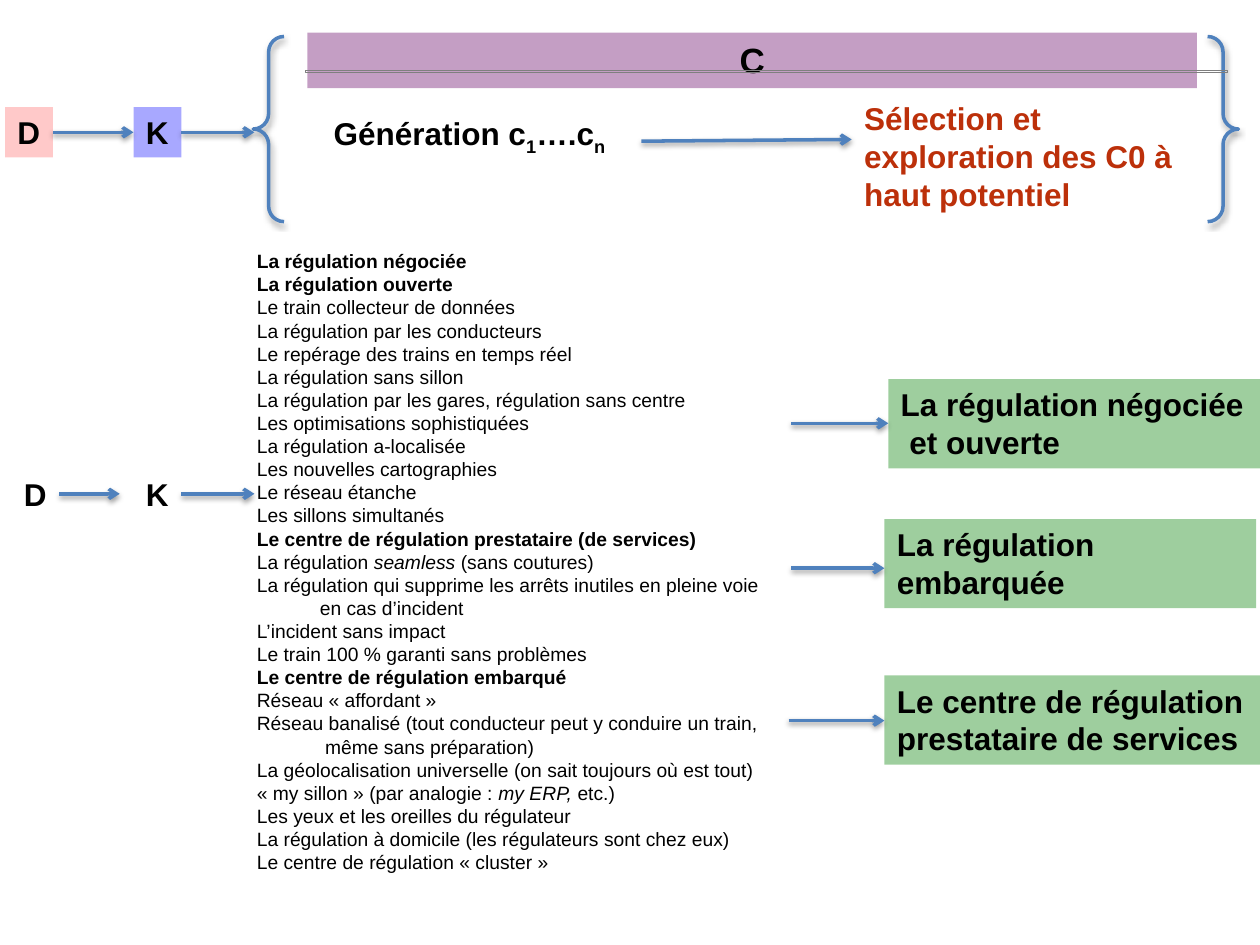
from collections import namedtuple
from dataclasses import dataclass

from lxml.etree import SubElement
from pptx import Presentation
from pptx.dml.color import RGBColor
from pptx.enum.shapes import MSO_CONNECTOR, MSO_SHAPE
from pptx.enum.text import MSO_ANCHOR, MSO_AUTO_SIZE, PP_ALIGN
from pptx.oxml.ns import qn
from pptx.util import Pt


@dataclass(frozen=True)
class Theme:
    font: str = "Arial"
    ink: str = "000000"
    accent: str = "BC300A"
    line: str = "4F81BD"
    rule: str = "7F7F7F"
    data: tuple = ("FF0000", 21)
    knowledge: tuple = ("0000FF", 34)
    concept: tuple = ("660066", 38)
    outcome: tuple = ("008000", 38)
    list_size: int = 11
    body_size: int = 18
    header_size: int = 20
    line_width: int = 2
    leading: float = 1.2


THEME = Theme()
Box = namedtuple("Box", "left top width height")
Run = namedtuple("Run", "text bold italic baseline", defaults=(False, False, 0))
Line = namedtuple("Line", "runs indent", defaults=(0,))


def plain(text, indent=0):
    return Line([Run(text)], indent)


def bold(text, indent=0):
    return Line([Run(text, bold=True)], indent)


CONCEPTS = [
    bold("La régulation négociée"),
    bold("La régulation ouverte"),
    plain("Le train collecteur de données"),
    plain("La régulation par les conducteurs"),
    plain("Le repérage des trains en temps réel"),
    plain("La régulation sans sillon"),
    plain("La régulation par les gares, régulation sans centre"),
    plain("Les optimisations sophistiquées"),
    plain("La régulation a-localisée"),
    plain("Les nouvelles cartographies"),
    plain("Le réseau étanche"),
    plain("Les sillons simultanés"),
    bold("Le centre de régulation prestataire (de services)"),
    Line([Run("La régulation "), Run("seamless ", italic=True), Run("(sans coutures)")]),
    plain("La régulation qui supprime les arrêts inutiles en pleine voie"),
    plain("en cas d’incident", indent=36),
    plain("L’incident sans impact"),
    plain("Le train 100 % garanti sans problèmes"),
    bold("Le centre de régulation embarqué"),
    plain("Réseau « affordant »"),
    plain("Réseau banalisé (tout conducteur peut y conduire un train,"),
    plain("même sans préparation)", indent=39),
    plain("La géolocalisation universelle (on sait toujours où est tout)"),
    Line([Run("« my sillon » (par analogie : "), Run("my ERP, ", italic=True), Run("etc.)")]),
    plain("Les yeux et les oreilles du régulateur"),
    plain("La régulation à domicile (les régulateurs sont chez eux)"),
    plain("Le centre de régulation « cluster »"),
]

OUTCOMES = [
    (Box(507.6, 216.7, 212.4, 51), 452.2, 25.2,
     [bold("La régulation négociée"), bold("et ouverte", indent=5)]),
    (Box(505.4, 296.6, 212.4, 51), 452.2, 28.1,
     [bold("La régulation"), bold("embarquée")]),
    (Box(505.4, 385.9, 214.6, 51), 450.7, 25.9,
     [bold("Le centre de régulation"), bold("prestataire de services")]),
]


def points(*lengths):
    return [Pt(length) for length in lengths]


def add_shadow(shape):
    effects = SubElement(shape._element.spPr, qn("a:effectLst"))
    shadow = SubElement(effects, qn("a:outerShdw"), blurRad=str(Pt(3.1)),
                        dist=str(Pt(1.6)), dir="5400000", rotWithShape="0")
    color = SubElement(shadow, qn("a:srgbClr"), val=THEME.ink)
    SubElement(color, qn("a:alpha"), val="38000")


def style_line(shape):
    shape.line.color.rgb = RGBColor.from_string(THEME.line)
    shape.line.width = Pt(THEME.line_width)
    add_shadow(shape)


def add_arrow(slide, start, end):
    arrow = slide.shapes.add_connector(MSO_CONNECTOR.STRAIGHT, *points(*start, *end))
    style_line(arrow)
    SubElement(arrow.line._get_or_add_ln(), qn("a:tailEnd"), type="arrow")


def write_lines(shape, lines, size, color=THEME.ink, align=PP_ALIGN.LEFT, wrap=True):
    frame = shape.text_frame
    frame.word_wrap = wrap
    frame.auto_size = MSO_AUTO_SIZE.SHAPE_TO_FIT_TEXT
    frame.vertical_anchor = MSO_ANCHOR.TOP
    for index, line in enumerate(lines):
        paragraph = frame.add_paragraph() if index else frame.paragraphs[0]
        paragraph.alignment = align
        paragraph.line_spacing = Pt(size * THEME.leading)
        if line.indent:
            paragraph._p.get_or_add_pPr().set("marL", str(Pt(line.indent)))
        for part in line.runs:
            run = paragraph.add_run()
            run.text = part.text
            run.font.name = THEME.font
            run.font.size = Pt(size)
            run.font.bold = part.bold
            run.font.italic = part.italic
            run.font.color.rgb = RGBColor.from_string(color)
            if part.baseline:
                run._r.get_or_add_rPr().set("baseline", str(part.baseline))


def add_text(slide, box, lines, size, **options):
    write_lines(slide.shapes.add_textbox(*points(*box)), lines, size, **options)


def add_panel(slide, box, fill, lines, size, **options):
    panel = slide.shapes.add_shape(MSO_SHAPE.RECTANGLE, *points(*box))
    panel.shadow.inherit = False
    panel.line.fill.background()
    color, opacity = fill
    panel.fill.solid()
    panel.fill.fore_color.rgb = RGBColor.from_string(color)
    color_element = panel._element.spPr.find(qn("a:solidFill"))[0]
    SubElement(color_element, qn("a:alpha"), val=str(opacity * 1000))
    write_lines(panel, lines, size, **options)


def add_chain(slide, box, first_arrow_end, fills):
    letter_width = 27.4
    knowledge_left = 76.3
    letters = zip("DK", (box.left, knowledge_left), fills)
    for letter, left, fill in letters:
        letter_box = Box(left, box.top, letter_width, box.height)
        lines = [bold(letter)]
        if fill:
            add_panel(slide, letter_box, fill, lines, THEME.body_size, wrap=False)
        else:
            add_text(slide, letter_box, lines, THEME.body_size, wrap=False)
    middle = box.top + box.height / 2
    add_arrow(slide, (box.left + letter_width, middle), (first_arrow_end, middle))
    add_arrow(slide, (knowledge_left + letter_width, middle), (box.left + box.width, middle))


def add_concept_space(slide, box):
    braces = slide.shapes.add_shape(MSO_SHAPE.DOUBLE_BRACE, *points(*box))
    braces.fill.background()
    style_line(braces)
    left, top = box.left, box.top
    add_panel(slide, Box(left + 31, top - 2.2, 508.3, 31.7), THEME.concept,
              [bold("C")], THEME.header_size, align=PP_ALIGN.CENTER)
    rule = slide.shapes.add_shape(MSO_SHAPE.RECTANGLE, *points(left + 30, top + 19.6, 527, 1.2))
    rule.shadow.inherit = False
    rule.fill.background()
    rule.line.color.rgb = RGBColor.from_string(THEME.rule)
    rule.line.width = Pt(0.5)
    generation = Line([Run("Génération c", True), Run("1", True, baseline=-25000),
                       Run("….c", True), Run("n", True, baseline=-25000)])
    add_text(slide, Box(left + 38.9, top + 43.9, 182.2, 28.8), [generation], THEME.body_size)
    add_arrow(slide, (left + 221.8, top + 59.8), (left + 342, top + 58.8))
    add_text(slide, Box(left + 342, top + 32.4, 212.4, 72.7),
             [bold("Sélection et exploration des C0 à haut potentiel")],
             THEME.body_size, color=THEME.accent)


def add_outcome(slide, box, arrow_left, arrow_offset, lines):
    add_panel(slide, box, THEME.outcome, lines, THEME.body_size)
    middle = box.top + arrow_offset
    add_arrow(slide, (arrow_left, middle), (box.left, middle))


def main():
    presentation = Presentation()
    presentation.slide_width, presentation.slide_height = points(720, 540)
    slide = presentation.slides.add_slide(presentation.slide_layouts[6])
    add_text(slide, Box(139.7, 139, 341.3, 367.2), CONCEPTS, THEME.list_size)
    for outcome in OUTCOMES:
        add_outcome(slide, *outcome)
    add_concept_space(slide, Box(144.7, 20.9, 563, 105.8))
    add_chain(slide, Box(2.9, 61.2, 142.5, 28.8), 76.3, (THEME.data, THEME.knowledge))
    add_chain(slide, Box(6.5, 267.8, 138.9, 28.8), 68.4, (None, None))
    presentation.save("out.pptx")


if __name__ == "__main__":
    main()
